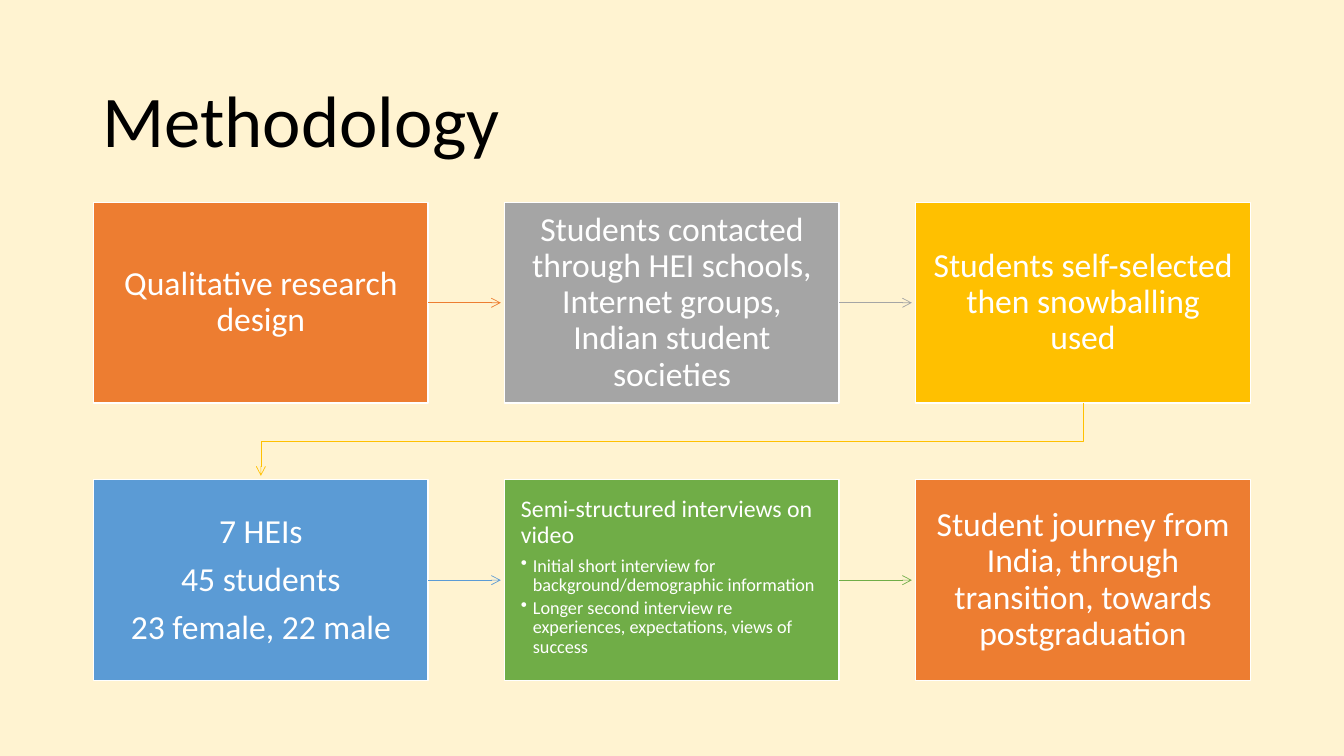
from lxml.etree import SubElement
from pptx import Presentation
from pptx.dml.color import RGBColor
from pptx.enum.shapes import MSO_CONNECTOR, MSO_SHAPE
from pptx.enum.text import MSO_ANCHOR, PP_ALIGN
from pptx.oxml.ns import qn
from pptx.util import Cm, Pt

LEFT, TOP = 2.36, 5.1
STEP_WIDTH, STEP_HEIGHT = 8.43, 5.06
COLUMN_PITCH, ROW_PITCH = 10.36, 6.99
ARROW_GAP = 0.1
BULLET_INDENT = Cm(0.3)

STEPS = [
    ("ED7D31", ["Qualitative research design"]),
    ("A5A5A5", ["Students contacted through HEI schools, Internet groups, "
                "Indian student societies"]),
    ("FFC000", ["Students self-selected then snowballing used"]),
    ("5B9BD5", ["7 HEIs", "45 students", "23 female, 22 male"]),
    ("70AD47", ["Semi-structured interviews on video"]),
    ("ED7D31", ["Student journey from India, through transition, "
                "towards postgraduation"]),
]
INTERVIEW_STEP = 4
INTERVIEWS = [
    "Initial short interview for background/demographic information",
    "Longer second interview re experiences, expectations, views of success",
]


def paint(color_format, hex_color):
    color_format.rgb = RGBColor.from_string(hex_color)


def write_text(frame, text, size, color="FFFFFF", align=PP_ALIGN.CENTER,
               after=0.35, bullet=False):
    paragraph = frame.paragraphs[0]
    if paragraph.runs:
        paragraph = frame.add_paragraph()
    paragraph.alignment = align
    paragraph.line_spacing = 0.9
    paragraph.space_after = Pt(round(size * after, 1))
    run = paragraph.add_run()
    run.text = text
    run.font.name = "Calibri"
    run.font.size = Pt(size)
    paint(run.font.color, color)
    if bullet:
        paragraph.level = 1
        properties = paragraph._p.get_or_add_pPr()
        properties.set("marL", str(BULLET_INDENT))
        properties.set("indent", str(-BULLET_INDENT))
        SubElement(properties, qn("a:buChar"), char="•")


def add_title(slide, text):
    title = slide.shapes.add_textbox(Cm(2.33), Cm(1.55), Cm(29.21), Cm(3.15))
    frame = title.text_frame
    frame.word_wrap = True
    frame.vertical_anchor = MSO_ANCHOR.MIDDLE
    write_text(frame, text, size=52, color="000000", align=PP_ALIGN.LEFT, after=0)


def add_step(slide, index, color):
    row, column = divmod(index, 3)
    step = slide.shapes.add_shape(
        MSO_SHAPE.RECTANGLE,
        Cm(LEFT + column * COLUMN_PITCH), Cm(TOP + row * ROW_PITCH),
        Cm(STEP_WIDTH), Cm(STEP_HEIGHT))
    step.shadow.inherit = False
    step.fill.solid()
    paint(step.fill.fore_color, color)
    paint(step.line.color, "FFFFFF")
    step.line.width = Pt(1)
    frame = step.text_frame
    frame.word_wrap = True
    frame.vertical_anchor = MSO_ANCHOR.MIDDLE
    frame.margin_left = frame.margin_right = Cm(0.41)
    frame.margin_top = frame.margin_bottom = Cm(0.43)
    return step


def fill_interviews(frame, heading):
    frame.vertical_anchor = MSO_ANCHOR.TOP
    write_text(frame, heading, size=17, align=PP_ALIGN.LEFT)
    for interview in INTERVIEWS:
        write_text(frame, interview, size=13, align=PP_ALIGN.LEFT,
                   after=0.15, bullet=True)


def style_arrow(arrow, color):
    paint(arrow.line.color, color)
    arrow.line.width = Pt(0.5)
    properties = arrow._element.spPr
    SubElement(properties.find(qn("a:ln")), qn("a:tailEnd"), type="arrow")
    SubElement(properties, qn("a:effectLst"))


def add_arrow(slide, source, target, color):
    middle = source.top + source.height // 2
    arrow = slide.shapes.add_connector(
        MSO_CONNECTOR.STRAIGHT, source.left + source.width, middle,
        target.left - Cm(ARROW_GAP), middle)
    arrow.begin_connect(source, 3)
    style_arrow(arrow, color)


def add_return_arrow(slide, source, target, color):
    start_x = source.left + source.width // 2
    end_x = target.left + target.width // 2
    start_y = source.top + source.height
    turn_y = (start_y + target.top) // 2
    outline = slide.shapes.build_freeform(start_x, start_y)
    outline.add_line_segments(
        [(start_x, turn_y), (end_x, turn_y), (end_x, target.top - Cm(ARROW_GAP))],
        close=False)
    arrow = outline.convert_to_shape()
    arrow.fill.background()
    style_arrow(arrow, color)


def main():
    presentation = Presentation()
    presentation.slide_width = Cm(33.87)
    presentation.slide_height = Cm(19.05)
    slide = presentation.slides.add_slide(presentation.slide_layouts[6])
    slide.background.fill.solid()
    paint(slide.background.fill.fore_color, "FFF3D1")

    add_title(slide, "Methodology")
    steps = []
    for index, (color, lines) in enumerate(STEPS):
        step = add_step(slide, index, color)
        steps.append(step)
        if index == INTERVIEW_STEP:
            fill_interviews(step.text_frame, lines[0])
        else:
            for line in lines:
                write_text(step.text_frame, line, size=24)

    for (color, _), source, target in zip(STEPS, steps, steps[1:]):
        connect = add_arrow if source.top == target.top else add_return_arrow
        connect(slide, source, target, color)

    presentation.save("out.pptx")


if __name__ == "__main__":
    main()
